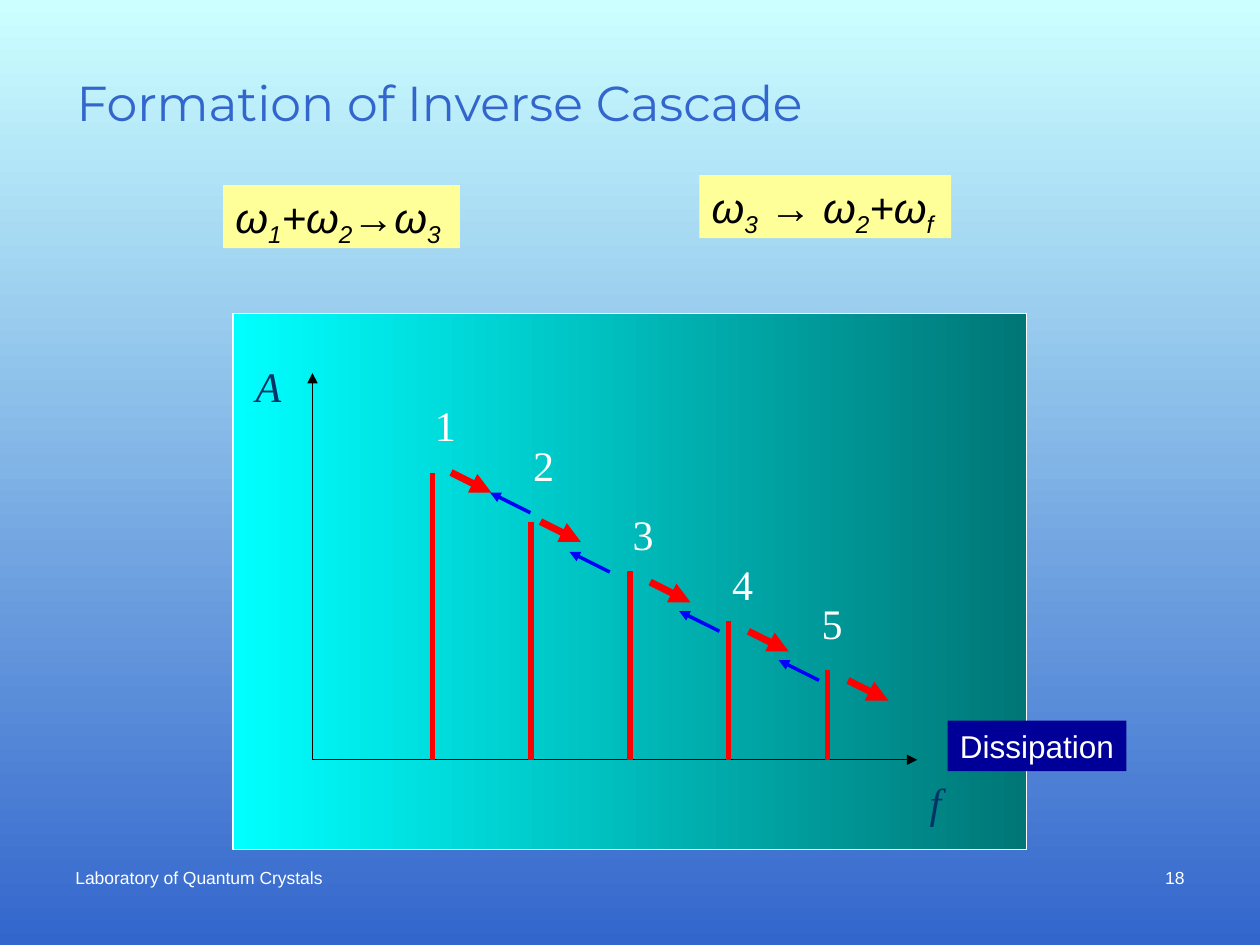
import pptx
import pptx.util
import pptx.dml.color
import pptx.enum.shapes
import pptx.enum.text
import pptx.oxml.ns
from lxml import etree

Inches = pptx.util.Inches
Pt = pptx.util.Pt
RGBColor = pptx.dml.color.RGBColor
Align = pptx.enum.text.PP_ALIGN
Anchor = pptx.enum.text.MSO_ANCHOR
RECT = pptx.enum.shapes.MSO_SHAPE.RECTANGLE

BLACK = RGBColor(0x00, 0x00, 0x00)
WHITE = RGBColor(0xFF, 0xFF, 0xFF)
SKY = RGBColor(0xCC, 0xFF, 0xFF)
BLUE = RGBColor(0x33, 0x66, 0xCC)
CYAN = RGBColor(0x00, 0xFF, 0xFF)
TEAL = RGBColor(0x00, 0x76, 0x76)
SLATE = RGBColor(0x00, 0x33, 0x66)
RED = RGBColor(0xFF, 0x00, 0x00)
BACK = RGBColor(0x00, 0x00, 0xFF)
YELLOW = RGBColor(0xFF, 0xFF, 0x99)
NAVY = RGBColor(0x00, 0x00, 0x99)
SERIF = "Times New Roman"

# box, text, alignment, size, font, colour
TITLE = (0.51, 0.36, 9.29, 0.9), "Formation of Inverse Cascade", Align.LEFT, 28, "Montserrat", BLUE
FOOT = [
    ((0.5, 6.83, 2.33, 0.52), "Laboratory of Quantum Crystals", Align.LEFT),
    ((7.17, 6.83, 2.33, 0.52), "18", Align.RIGHT),
]
AXES = [((2.48, 6.03), (2.48, 2.96), "A", (1.93, 2.81, 0.4, 0.5)),
        ((2.48, 6.03), (7.28, 6.03), "f", (7.28, 6.11, 0.29, 0.5))]

# Odd parts of a formula are subscripts
FORMULAS = [
    ((1.77, 1.47, 1.88, 0.5), ["ω", "1", "+ω", "2", "→ω", "3"]),
    ((5.55, 1.39, 2, 0.5), ["ω", "3", " → ω", "2", "+ω", "f"]),
]

BASE = 6.03
FIRST, LAST = (3.43, 3.75), (6.57, 5.32)
LABELS = [("1", 3.35, 3.12), ("2", 4.13, 3.44), ("3", 4.92, 3.99),
          ("4", 5.71, 4.38), ("5", 6.42, 4.69)]
DOWN = [(3.58, 3.75), (4.29, 4.14), (5.16, 4.62), (5.94, 5.01), (6.73, 5.4)]
UP = [(4.21, 4.07), (4.84, 4.54), (5.71, 5.01), (6.5, 5.4)]
HOP = (0.32, 0.16)

deck = pptx.Presentation()
deck.slide_width, deck.slide_height = Inches(10), Inches(7.5)
slide = deck.slides.add_slide(deck.slide_layouts[6])
shapes = slide.shapes


def blend(fill, start, end, angle):
    fill.gradient()
    fill.gradient_angle = angle
    for stop, color in zip(fill.gradient_stops, (start, end)):
        stop.color.rgb = color


def write(shape, parts, align, size, font, color, italic=False, wrap=False):
    frame = shape.text_frame
    frame.word_wrap = wrap
    frame.vertical_anchor = Anchor.TOP
    line = frame.paragraphs[0]
    line.alignment = align
    for i, part in enumerate(parts):
        run = line.add_run()
        run.text = part
        run.font.size = Pt(size)
        run.font.name = font
        run.font.italic = italic
        run.font.color.rgb = color
        if i % 2:
            run.font._element.set("baseline", "-25000")
    return frame


def label(box, text, *style, **more):
    shape = shapes.add_textbox(*map(Inches, box))
    return write(shape, [text], *style, **more)


def block(box):
    shape = shapes.add_shape(RECT, *map(Inches, box))
    shape.shadow.inherit = False
    shape.line.fill.background()
    return shape


def panel(box, fill, parts, *style, **more):
    shape = block(box)
    shape.fill.solid()
    shape.fill.fore_color.rgb = fill
    write(shape, parts, Align.LEFT, *style, **more)


def stroke(start, end, color, width, arrow=False):
    line = shapes.add_connector(
        pptx.enum.shapes.MSO_CONNECTOR.STRAIGHT, *map(Inches, (*start, *end)))
    line.line.color.rgb = color
    line.line.width = Pt(width)
    if arrow:
        tail = etree.SubElement(line.line._get_or_add_ln(), pptx.oxml.ns.qn("a:tailEnd"))
        tail.set("type", "triangle")
    etree.SubElement(line._element.spPr, pptx.oxml.ns.qn("a:effectLst"))


blend(slide.background.fill, SKY, BLUE, 270)
for box, text, align in FOOT:
    label(box, text, align, 10, "Arial", WHITE, wrap=True)
label(*TITLE, wrap=True).vertical_anchor = Anchor.MIDDLE

plot = block((1.85, 2.49, 6.3, 4.25))
blend(plot.fill, CYAN, TEAL, 0)
plot.line.color.rgb = WHITE
plot.line.width = Pt(0.75)

for start, end, name, box in AXES:
    stroke(start, end, BLACK, 0.75, arrow=True)
    label(box, name, Align.CENTER, 24, SERIF, SLATE, italic=True)

for i, (text, left, top) in enumerate(LABELS):
    x, y = (a + (b - a) * i / (len(LABELS) - 1) for a, b in zip(FIRST, LAST))
    stroke((x, y), (x, BASE), RED, 3)
    label((left, top, 0.37, 0.5), text, Align.CENTER, 24, SERIF, WHITE)

for starts, sign, color, width in ((DOWN, 1, RED, 4), (UP, -1, BACK, 2)):
    for x, y in starts:
        stroke((x, y), (x + sign * HOP[0], y + sign * HOP[1]), color, width, arrow=True)

for box, parts in FORMULAS:
    panel(box, YELLOW, parts, 24, "Arial", BLACK, italic=True)
panel((7.52, 5.72, 1.42, 0.4), NAVY, ["Dissipation"], 18, "Arial", WHITE)

deck.save("out.pptx")
